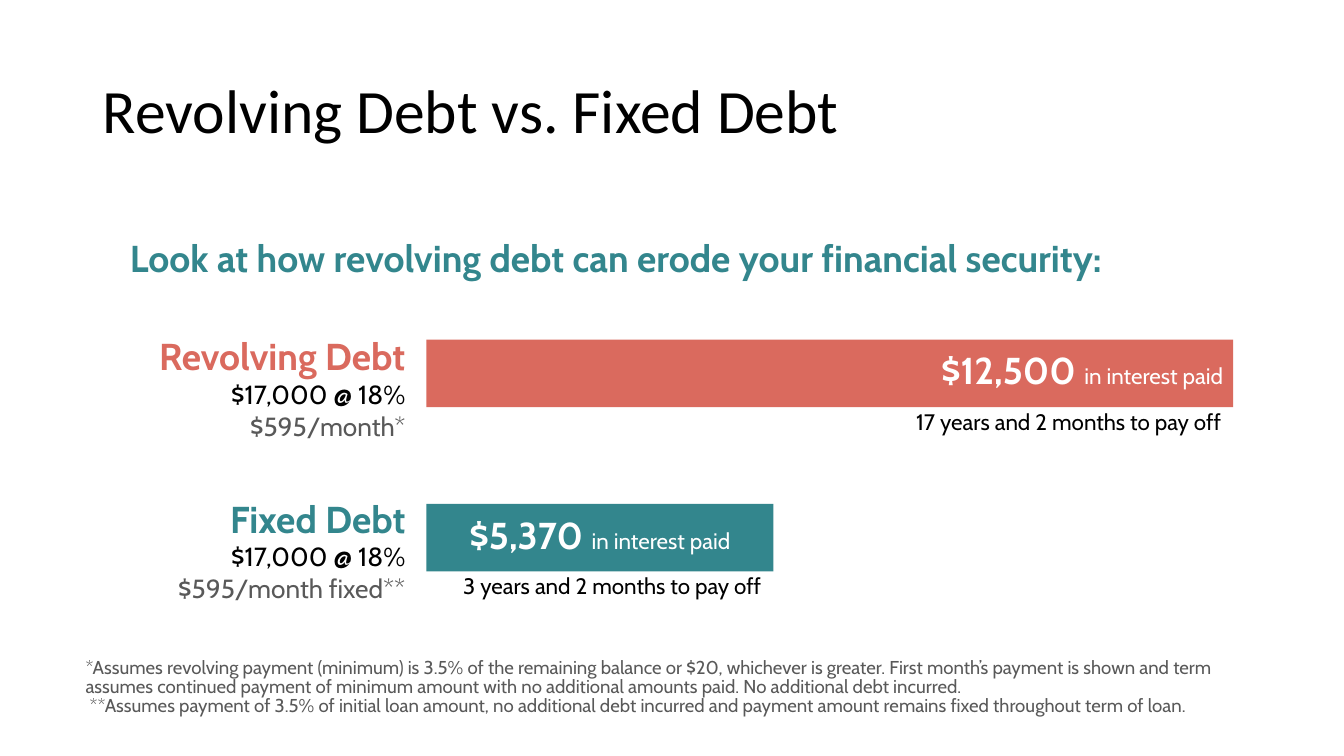
from pptx import Presentation
from pptx.dml.color import RGBColor
from pptx.enum.shapes import MSO_SHAPE as SHAPE
from pptx.enum.text import MSO_ANCHOR as ANCHOR, PP_ALIGN as ALIGN
from pptx.util import Inches, Pt

# Content
TITLE = "Revolving Debt vs. Fixed Debt"
HEADING = "Look at how revolving debt can erode your financial security:"
DEBTS = [
    dict(name="Revolving Debt", loan="$17,000 @ 18%", payment="$595/month*",
         interest=12500, payoff="17 years and 2 months to pay off",
         color="coral", align=ALIGN.RIGHT, bar_top=3.37, label_top=3.26),
    dict(name="Fixed Debt", loan="$17,000 @ 18%", payment="$595/month fixed**",
         interest=5370, payoff="3 years and 2 months to pay off",
         color="teal", align=ALIGN.CENTER, bar_top=5, label_top=4.87),
]
FOOTNOTES = [
    "*Assumes revolving payment (minimum) is 3.5% of the remaining balance or $20, "
    "whichever is greater. First month’s payment is shown and term assumes continued "
    "payment of minimum amount with no additional amounts paid. No additional debt incurred.",
    " **Assumes payment of 3.5% of initial loan amount, no additional debt incurred and "
    "payment amount remains fixed throughout term of loan.",
]

# Style and layout
COLORS = dict(black="000000", gray="595959", white="FFFFFF", teal="33868D", coral="DA6A5E")
BAR_LEFT, BAR_HEIGHT, LONGEST_BAR = 4.23, 0.67, 8
BIG, MEDIUM, SMALL, NOTE = 26.7, 18.7, 16, 13.3
TIGHT = 0.85


def rgb(name):
    return RGBColor.from_string(COLORS[name])


def write(tf, lines, align=ALIGN.LEFT, spacing=1.0):
    """Each line is a list of runs: (text, size, color, bold, font)."""
    for i, runs in enumerate(lines):
        p = tf.paragraphs[0] if i == 0 else tf.add_paragraph()
        p.alignment, p.line_spacing = align, spacing
        for text, size, color, bold, font in runs:
            r = p.add_run()
            r.text = text
            r.font.size, r.font.bold, r.font.name = Pt(size), bold, font
            r.font.color.rgb = rgb(color)


def run(text, size, color, bold=False, font="Cabin"):
    return text, size, color, bold, font


def add_text(left, top, width, height, lines, wrap=True, anchor=ANCHOR.TOP, **style):
    sp = s.shapes.add_textbox(Inches(left), Inches(top), Inches(width), Inches(height))
    tf = sp.text_frame
    tf.word_wrap, tf.vertical_anchor = wrap, anchor
    write(tf, lines, **style)


prs = Presentation()
prs.slide_width, prs.slide_height = Inches(13.33), Inches(7.5)
s = prs.slides.add_slide(prs.slide_layouts[6])

# Title, heading and footnotes
add_text(0.92, 0.4, 11.5, 1.45, [[run(TITLE, 44, "black", font="Calibri")]],
         anchor=ANCHOR.MIDDLE, spacing=0.9)
add_text(1.19, 2.28, 11.02, 0.55, [[run(HEADING, BIG, "teal", True)]], wrap=False)
add_text(0.75, 6.49, 11.83, 0.67, [[run(note, NOTE, "gray")] for note in FOOTNOTES],
         spacing=TIGHT)

# One bar per debt, its length in proportion to the interest paid
most_interest = max(d["interest"] for d in DEBTS)
for d in DEBTS:
    width = round(LONGEST_BAR * d["interest"] / most_interest, 2)
    bar = s.shapes.add_shape(SHAPE.RECTANGLE, Inches(BAR_LEFT), Inches(d["bar_top"]),
                             Inches(width), Inches(BAR_HEIGHT))
    bar.shadow.inherit = False
    bar.fill.solid()
    bar.fill.fore_color.rgb = rgb(d["color"])
    bar.line.fill.background()
    tf = bar.text_frame
    tf.word_wrap, tf.vertical_anchor = True, ANCHOR.MIDDLE
    write(tf, [[run(f"${d['interest']:,} ", BIG, "white", True),
                run("in interest paid", SMALL, "white")]], d["align"], TIGHT)

    # Label left of the bar, payoff time below it
    add_text(0.67, d["label_top"], 3.45, 1.18,
             [[run(d["name"], BIG, d["color"], True)],
              [run(d["loan"], MEDIUM, "black")],
              [run(d["payment"], MEDIUM, "gray")]], align=ALIGN.RIGHT)
    add_text(BAR_LEFT - 0.1, d["bar_top"] + BAR_HEIGHT, width + 0.08, 0.33,
             [[run(d["payoff"], SMALL, "black")]], align=ALIGN.RIGHT, spacing=TIGHT)

prs.save("out.pptx")
